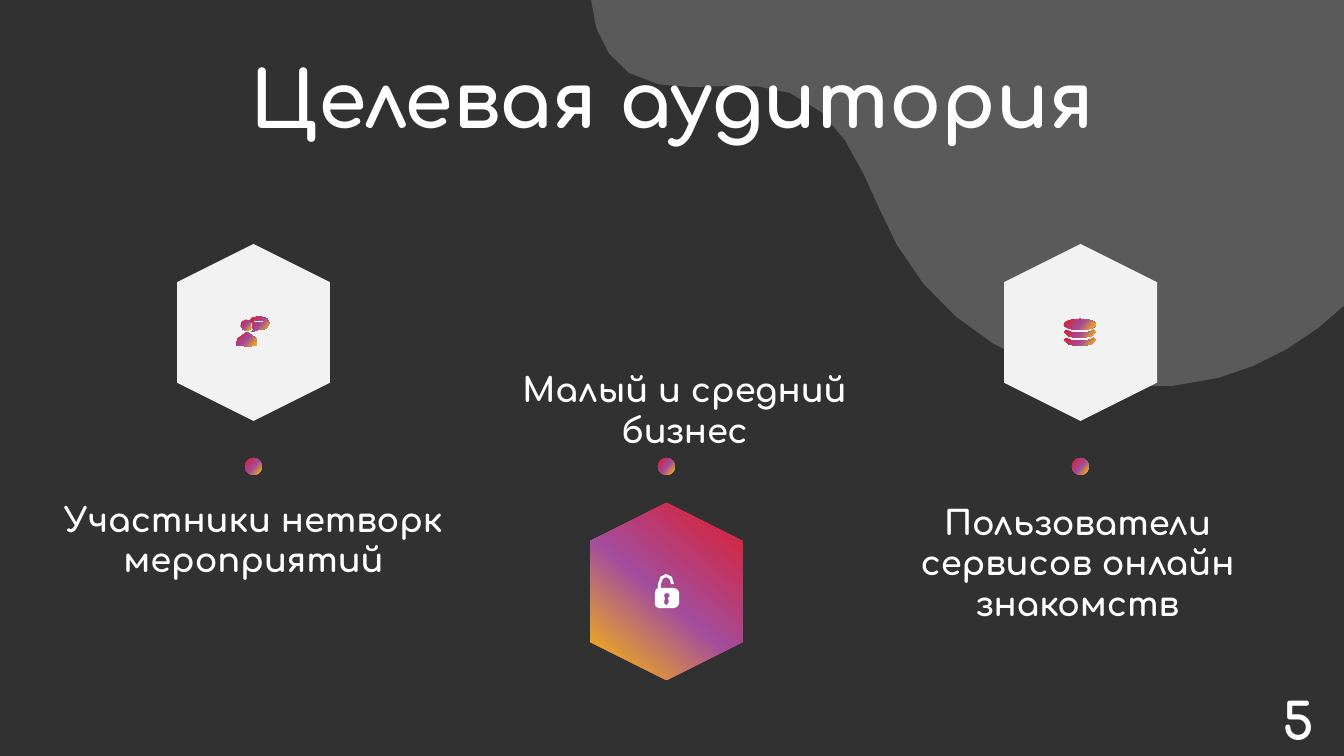
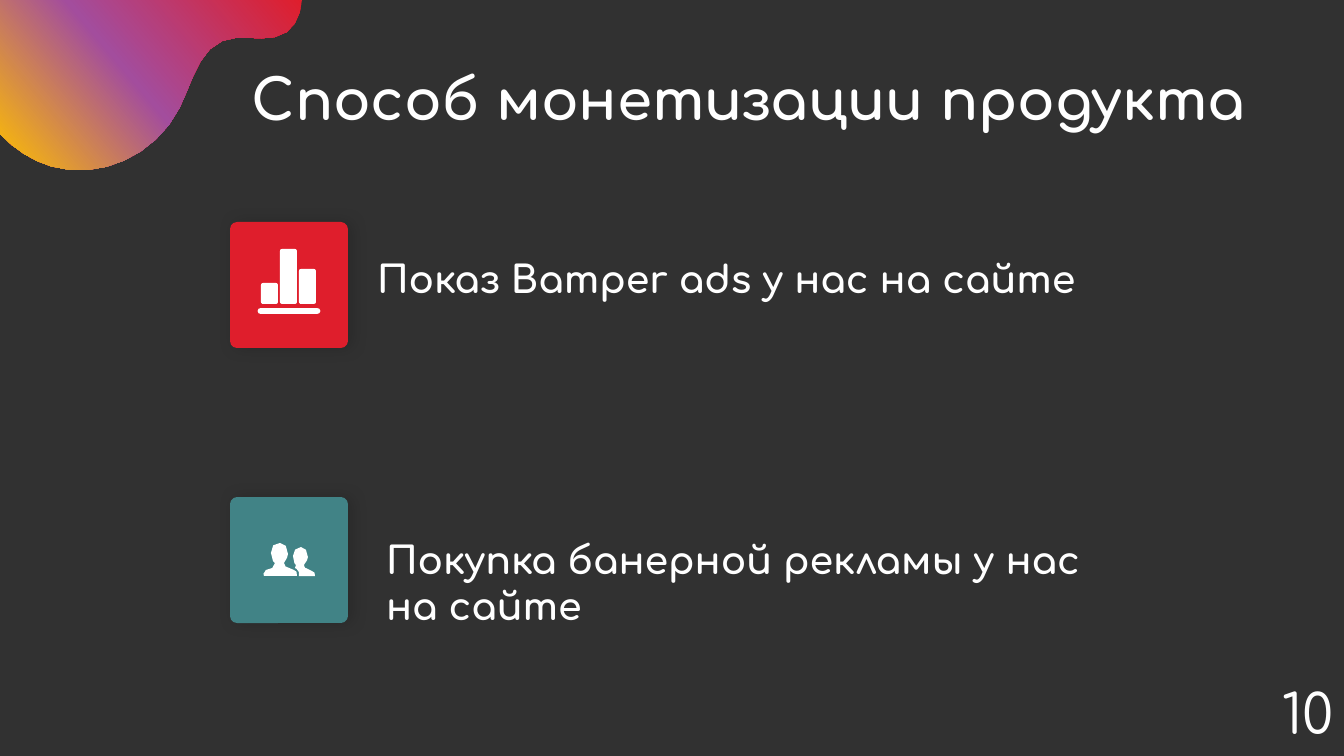
"""Build the audience and monetization slides."""
from copy import deepcopy
from math import dist

from lxml.etree import SubElement
from pptx import Presentation
from pptx.dml.color import RGBColor
from pptx.enum.shapes import MSO_CONNECTOR, MSO_SHAPE
from pptx.enum.text import MSO_ANCHOR, MSO_AUTO_SIZE, PP_ALIGN
from pptx.oxml.ns import qn
from pptx.util import Pt

PX = 914400 / 100.8

DARK = RGBColor(0x31, 0x31, 0x31)
WHITE = RGBColor(0xFF, 0xFF, 0xFF)
HAZE = RGBColor(0xFE, 0xFE, 0xFE)
PALE = RGBColor(0xF2, 0xF2, 0xF2)
RED = RGBColor(0xDF, 0x1E, 0x2C)
PURPLE = RGBColor(0xA3, 0x4D, 0x9D)
GOLD = RGBColor(0xFF, 0xC0, 0x00)
TEAL = RGBColor(0x41, 0x83, 0x86)
SUNSET = ((0, RED), (0.53, PURPLE), (1, GOLD))

FONT = {"name": "Comfortaa", "bold": True}
FRAME = {"word_wrap": True, "auto_size": MSO_AUTO_SIZE.NONE,
         "margin_left": round(10 * PX), "margin_right": round(10 * PX)}

BLOB = [[(0, 0), (2, 29, 14, 57, 38, 73), (85, 102, 148, 74, 199, 93),
         (259, 115, 276, 190, 306, 245), (367, 355, 507, 410, 627, 378),
         (675, 365, 719, 339, 755, 304), (755, 0)]]
DISK_RIM = [[(30, 0), (27, 2, 22, 3, 16, 3), (10, 3, 4, 2, 2, 0),
             (0, 2), (0, 6, 7, 8, 16, 8), (24, 8, 32, 6, 32, 2)]]
SPEAKER_BODY = [[(11, 15), (1, 15, 0, 28, 0, 28), (6, 32, 21, 28, 21, 28),
                 (22, 28, 22, 15, 11, 15)]]
SPEAKER_HEAD = [[(14, 4), (13, 4, 11, 3, 10, 3), (6, 4, 4, 6, 5, 9),
                 (5, 12, 8, 14, 11, 14), (13, 14, 14, 12, 15, 11),
                 (16, 7, 14, 4, 14, 4)]]
SPEECH_BUBBLE = [
    [(26, 0), (20, 0), (17, 0, 15, 1, 14, 3), (14, 4, 16, 5, 16, 6),
     (17, 8, 17, 10, 16, 11), (18, 12), (16, 15), (22, 13), (26, 13),
     (30, 13, 33, 10, 33, 6), (33, 2, 30, 0, 26, 0)],
    [(28, 8), (18, 8), (18, 7), (28, 7)],
    [(28, 6), (18, 6), (18, 4), (28, 4)]]
PADLOCK = [
    [(19, 14), (6, 14), (6, 10), (6, 6, 9, 3, 11, 3), (14, 3, 16, 6, 16, 10),
     (19, 10), (19, 4, 16, 0, 11, 0), (7, 0, 3, 4, 3, 10), (3, 14),
     (1, 15, 0, 16, 0, 19), (0, 30), (0, 32, 1, 34, 4, 34), (19, 34),
     (21, 34, 24, 32, 24, 30), (24, 18), (24, 16, 21, 14, 19, 14)],
    [(13, 24), (14, 28), (14, 30, 13, 31, 12, 31), (10, 31, 9, 30, 9, 28),
     (10, 24), (9, 22), (9, 20, 10, 19, 12, 19),
     (13, 19, 15, 20, 15, 22), (13, 24)]]
FRONT_PERSON = [[(2, 33), (2, 33, 0, 29, 4, 27), (9, 26, 13, 25, 13, 20),
                 (13, 20, 9, 18, 9, 10), (9, 3, 12, 0, 18, 0),
                 (23, 0, 26, 4, 26, 11), (26, 11, 25, 18, 22, 20),
                 (23, 21, 22, 26, 32, 27), (35, 27, 35, 30, 35, 33)]]
BACK_PERSON = [[(37, 33), (53, 33), (53, 31, 53, 28, 50, 28),
                (42, 26, 42, 23, 42, 22), (45, 20, 46, 14, 46, 14),
                (46, 8, 43, 4, 39, 4), (34, 4, 31, 8, 31, 13),
                (31, 20, 34, 22, 34, 22), (33, 25),
                (33, 25, 36, 26, 37, 29)]]


def paint(shape, fill, angle=320):
    shape.shadow.inherit = False
    shape.line.fill.background()
    if isinstance(fill, RGBColor):
        shape.fill.solid()
        shape.fill.fore_color.rgb = fill
        return shape
    shape.fill.gradient()
    shape.fill.gradient_angle = angle
    first_stop = shape._element.spPr.find(".//" + qn("a:gs"))
    first_stop.addnext(deepcopy(first_stop))
    for stop, (position, color) in zip(shape.fill.gradient_stops, fill):
        stop.position = position
        stop.color.rgb = color
    return shape


def draw_outline(slide, contours, left, top, fill, stretch=(1, 1), angle=320):
    builder = None
    for contour in contours:
        points = [contour[0]]
        for step in contour[1:]:
            if len(step) == 2:
                points.append(step)
                continue
            ends = [points[-1], step[:2], step[2:4], step[4:]]
            chord = dist(ends[0], ends[3])
            pieces = 1 if chord < 4 else 2 + int(chord // 50)
            for t in (i / pieces for i in range(1, pieces + 1)):
                weights = ((1 - t) ** 3, 3 * t * (1 - t) ** 2,
                           3 * t * t * (1 - t), t ** 3)
                points.append(tuple(sum(w * end[axis] for w, end in zip(weights, ends))
                                    for axis in (0, 1)))
        if dist(points[0], points[-1]) < 0.01:
            points.pop()
        points = [(round((left + x * stretch[0]) * PX),
                   round((top + y * stretch[1]) * PX)) for x, y in points]
        if builder is None:
            builder = slide.shapes.build_freeform(*points[0], scale=1.0)
        else:
            builder.move_to(*points[0])
        builder.add_line_segments(points[1:], close=True)
    return paint(builder.convert_to_shape(), fill, angle)


deck = Presentation()
deck.slide_width, deck.slide_height = round(1344 * PX), round(756 * PX)
backdrop = deck.slide_master.background.fill
backdrop.solid()
backdrop.fore_color.rgb = DARK
audience, monetization = (deck.slides.add_slide(deck.slide_layouts[5]) for _ in range(2))

haze = draw_outline(audience, BLOB, 591, 0, HAZE)
haze_color = haze._element.spPr.find(".//" + qn("a:srgbClr"))
SubElement(haze_color, qn("a:alpha"), val="20000")
draw_outline(monetization, BLOB, 302, 0, SUNSET, (-0.4, 0.44), 220)

for column, (middle, fill) in enumerate([(332, PALE), (591, SUNSET), (332, PALE)]):
    center = 253 + 827 * column // 2
    hexagon = audience.shapes.add_shape(
        MSO_SHAPE.HEXAGON, *(round(v * PX) for v in (center - 88, middle - 76, 177, 153)))
    hexagon.rotation = 90
    paint(hexagon, fill)
    dot = audience.shapes.add_shape(
        MSO_SHAPE.OVAL, *(round(v * PX) for v in (center - 8, 458, 17, 17)))
    paint(dot, SUNSET)

for speaker_part in (SPEAKER_BODY, SPEAKER_HEAD, SPEECH_BUBBLE):
    draw_outline(audience, speaker_part, 236, 317, SUNSET)
draw_outline(audience, PADLOCK, 655, 574, WHITE)
for rim_top in (338, 330):
    draw_outline(audience, DISK_RIM, 1064, rim_top, SUNSET)
disk_top = audience.shapes.add_shape(
    MSO_SHAPE.OVAL, *(round(v * PX) for v in (1064, 319, 32, 11)))
paint(disk_top, SUNSET)

for tile_top, fill in ((222, RED), (497, TEAL)):
    tile = monetization.shapes.add_shape(
        MSO_SHAPE.ROUNDED_RECTANGLE, *(round(v * PX) for v in (230, tile_top, 118, 126)))
    tile.adjustments[0] = 0.06
    paint(tile, fill)
    glow = SubElement(tile._element.spPr.find(qn("a:effectLst")), qn("a:outerShdw"),
                      blurRad=str(Pt(12)), dist=str(Pt(3)), dir="0", rotWithShape="0")
    glow_color = SubElement(glow, qn("a:srgbClr"), val="000000")
    SubElement(glow_color, qn("a:alpha"), val="16000")

for position, bar_height in enumerate((21, 55, 35)):
    bar = monetization.shapes.add_shape(
        MSO_SHAPE.ROUNDED_RECTANGLE,
        *(round(v * PX) for v in (261 + 19 * position, 304 - bar_height, 17, bar_height)))
    bar.adjustments[0] = 0.12
    paint(bar, WHITE)
baseline = monetization.shapes.add_connector(
    MSO_CONNECTOR.STRAIGHT, *(round(v * PX) for v in (261, 311, 317, 311)))
baseline.line.color.rgb = WHITE
baseline.line.width = Pt(4.87)
baseline.line._get_or_add_ln().set("cap", "rnd")
SubElement(baseline._element.spPr, qn("a:effectLst"))
for person in (FRONT_PERSON, BACK_PERSON):
    draw_outline(monetization, person, 262, 543, WHITE)

titles = [
    (audience, "Целевая аудитория", (225, 44, 895, 119), 55.5),
    (monetization, "Способ монетизации продукта", (173, 43, 1151, 119), 40),
]
labels = [
    (audience, "Участники нетворк мероприятий", (46, 494, 415, 88), 24,
     PP_ALIGN.CENTER, MSO_ANCHOR.TOP, 5),
    (audience, "Малый и средний бизнес", (452, 357, 465, 105), 24,
     PP_ALIGN.CENTER, MSO_ANCHOR.MIDDLE, 5),
    (audience, "Пользователи сервисов онлайн знакомств", (845, 497, 465, 144), 24,
     PP_ALIGN.CENTER, MSO_ANCHOR.TOP, 5),
    (audience, "5", (1259, 680, 79, 82), 36, PP_ALIGN.CENTER, MSO_ANCHOR.TOP, 10),
    (monetization, "Показ Bamper ads у нас на сайте", (367, 246, 765, 67), 27,
     PP_ALIGN.LEFT, MSO_ANCHOR.TOP, 10),
    (monetization, "Покупка банерной рекламы у нас на сайте", (376, 527, 765, 112), 27,
     PP_ALIGN.LEFT, MSO_ANCHOR.TOP, 10),
    (monetization, "10", (1271, 670, 73, 87), 39, PP_ALIGN.CENTER, MSO_ANCHOR.TOP, 10),
]
wordings = [(slide.shapes.title, *rest, PP_ALIGN.CENTER, MSO_ANCHOR.MIDDLE, 5)
            for slide, *rest in titles]
wordings += [(slide.shapes.add_textbox(0, 0, 0, 0), *rest) for slide, *rest in labels]
for holder, wording, box, size, align, anchor, inset in wordings:
    for side, length in zip(("left", "top", "width", "height"), box):
        setattr(holder, side, round(length * PX))
    frame = holder.text_frame
    frame.text = wording
    frame_format = {**FRAME, "vertical_anchor": anchor,
                    "margin_top": round(inset * PX), "margin_bottom": round(inset * PX)}
    for attribute, value in frame_format.items():
        setattr(frame, attribute, value)
    paragraph = frame.paragraphs[0]
    paragraph.alignment = align
    font = paragraph.runs[0].font
    for attribute, value in {**FONT, "size": Pt(size)}.items():
        setattr(font, attribute, value)
    font.color.rgb = WHITE
    if wording == "10":
        font.bold = False
for slide in (audience, monetization):
    slide.shapes.title.text_frame.paragraphs[0].line_spacing = 0.9

deck.save("out.pptx")
